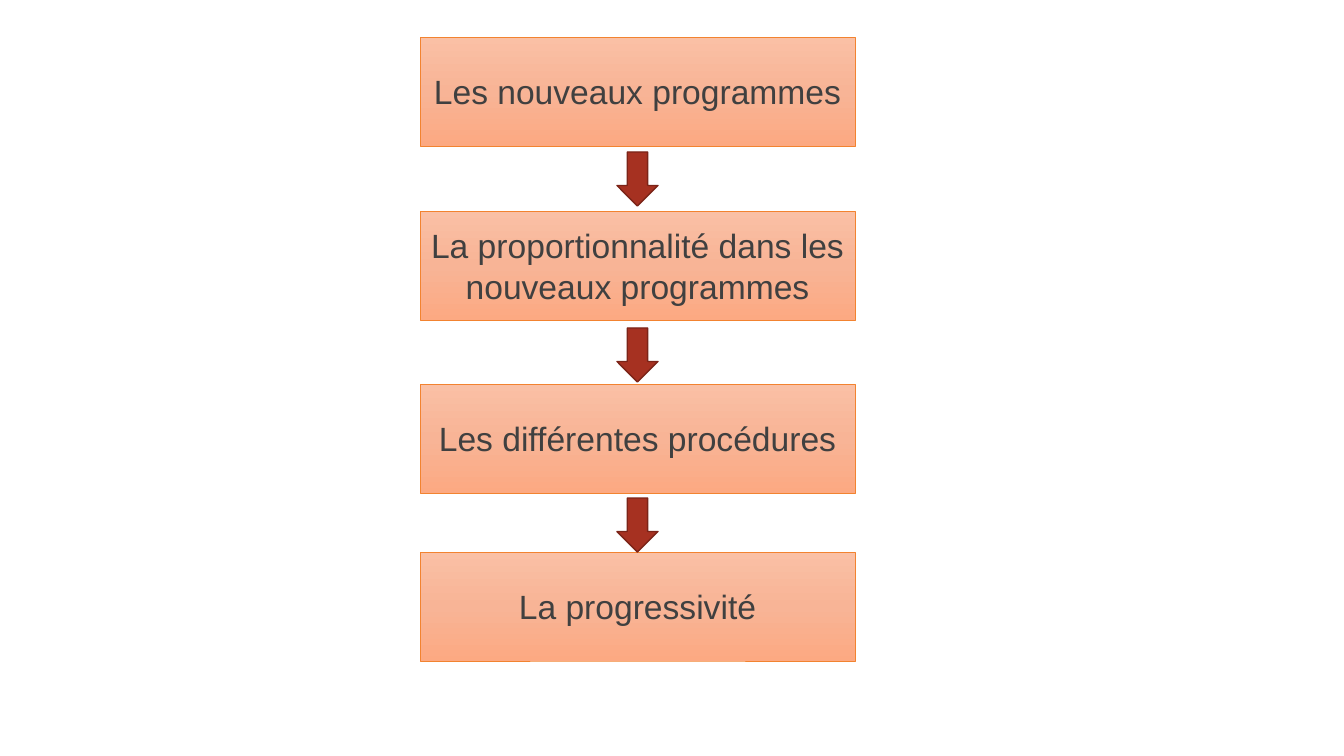
"""Build a slide with four topic boxes linked by down arrows."""
from copy import deepcopy

from pptx import Presentation
from pptx.dml.color import RGBColor
from pptx.enum.shapes import MSO_SHAPE
from pptx.enum.text import MSO_ANCHOR, PP_ALIGN
from pptx.oxml.ns import qn
from pptx.util import Emu, Pt

RECT, DOWN_ARROW = MSO_SHAPE.RECTANGLE, MSO_SHAPE.DOWN_ARROW
MIDDLE, CENTER = MSO_ANCHOR.MIDDLE, PP_ALIGN.CENTER
GRADIENT = [(0, "FAC0A5"), (0.5, "F8B496"), (1, "FCA982")]
TOPICS = [
    (37, "Les nouveaux programmes"),
    (211, "La proportionnalité dans les nouveaux programmes"),
    (384, "Les différentes procédures"),
    (552, "La progressivité"),
]
ARROW_TOPS = [152, 328, 498]


def rgb(color):
    return RGBColor.from_string(color)


def add_shape(kind, box, line_color, line_width):
    sp = slide.shapes.add_shape(kind, *[Emu(round(v * 914400 / 100.8)) for v in box])
    sp.shadow.inherit = False
    sp.line.color.rgb = rgb(line_color)
    sp.line.width = Pt(line_width)
    return sp


prs = Presentation()
prs.slide_width = Emu(12192000)
prs.slide_height = Emu(6858000)
slide = prs.slides.add_slide(prs.slide_layouts[6])

for top, text in TOPICS:
    sp = add_shape(RECT, (420, top, 435, 109), "F28330", 0.5)
    sp.fill.gradient()
    sp.fill.gradient_angle = 270
    stop_list = sp._element.spPr.find(".//" + qn("a:gsLst"))
    stop_list.insert(1, deepcopy(stop_list[0]))
    for stop, (position, color) in zip(sp.fill.gradient_stops, GRADIENT):
        stop.position = position
        stop.color.rgb = rgb(color)
    tf = sp.text_frame
    tf.word_wrap = True
    tf.vertical_anchor = MIDDLE
    p = tf.paragraphs[0]
    p.alignment = CENTER
    r = p.add_run()
    r.text = text
    r.font.name = "Arial"
    r.font.size = Pt(24)
    r.font.color.rgb = rgb("404040")

for top in ARROW_TOPS:
    sp = add_shape(DOWN_ARROW, (617, top, 41, 54), "7B2418", 1)
    sp.fill.solid()
    sp.fill.fore_color.rgb = rgb("A63121")

prs.save("out.pptx")
